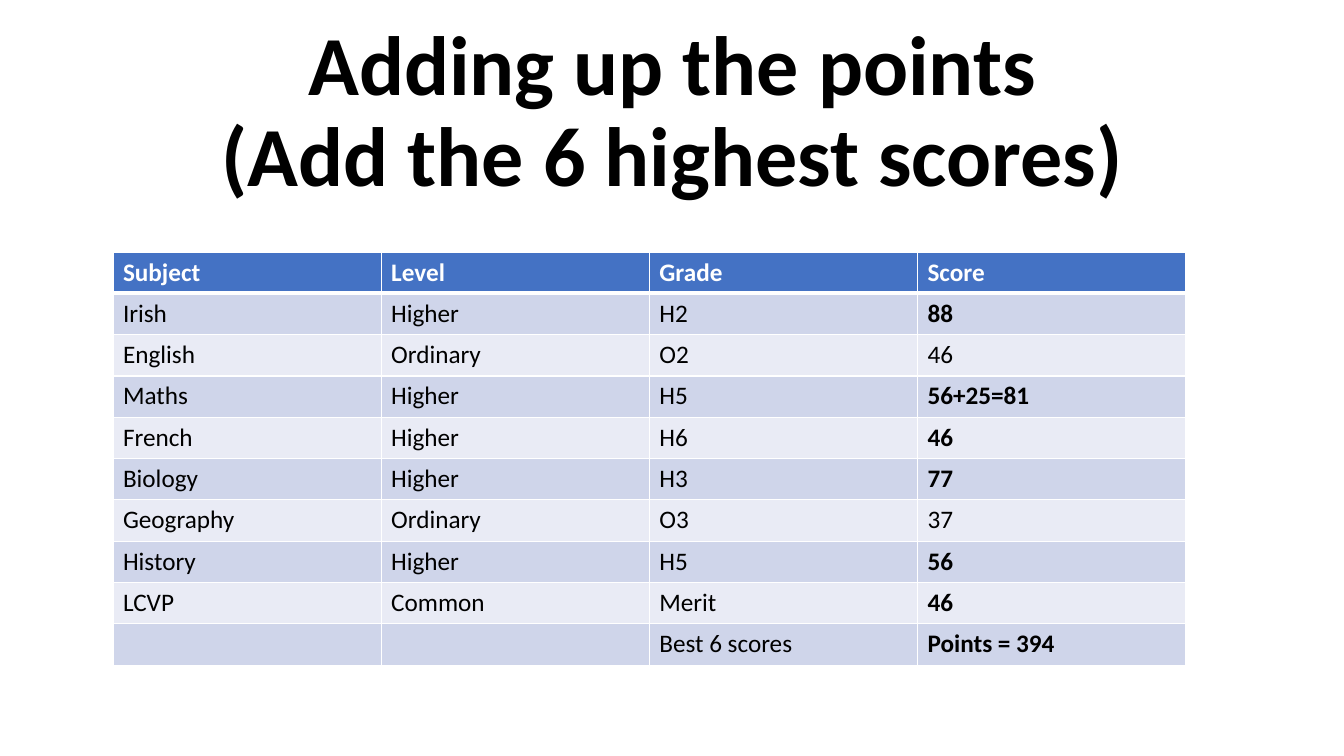
from lxml import etree
from pptx import Presentation
from pptx import util as u
from pptx.dml.color import RGBColor
from pptx.enum import text
from pptx.oxml import ns

FONT = "Calibri"
BLACK = RGBColor(0x00, 0x00, 0x00)
WHITE = RGBColor(0xFF, 0xFF, 0xFF)
HEADER_BLUE = RGBColor(0x44, 0x72, 0xC4)
BAND_DARK = RGBColor(0xCF, 0xD5, 0xEA)
BAND_LIGHT = RGBColor(0xE9, 0xEB, 0xF5)

WIDTH, HEIGHT = u.Inches(13.33), u.Inches(7.5)
COLUMN, ROW = u.Inches(2.66), u.Inches(0.41)
THIN, THICK = u.Pt(1), u.Pt(3)

TITLE_LINES = ["Adding up the points", "(Add the 6 highest scores)"]
HEADINGS = ("Subject", "Level", "Grade", "Score")
# Each result ends with whether its score is among the best six
RESULTS = [
    ("Irish", "Higher", "H2", "88", True),
    ("English", "Ordinary", "O2", "46", False),
    ("Maths", "Higher", "H5", "56+25=81", True),
    ("French", "Higher", "H6", "46", True),
    ("Biology", "Higher", "H3", "77", True),
    ("Geography", "Ordinary", "O3", "37", False),
    ("History", "Higher", "H5", "56", True),
    ("LCVP", "Common", "Merit", "46", True),
    ("", "", "Best 6 scores", "Points = 394", True),
]


def add_span(para, words, size, color, bold):
    span = para.add_run()
    span.text = words
    span.font.name = FONT
    span.font.size = u.Pt(size)
    span.font.bold = bold
    span.font.color.rgb = color


def add_title(page, lines):
    box = page.shapes.add_textbox(u.Inches(0.92), u.Inches(0.4),
                                  u.Inches(11.5), u.Inches(1.45))
    frame = box.text_frame
    frame.word_wrap = True
    frame.vertical_anchor = text.MSO_ANCHOR.MIDDLE
    para = frame.paragraphs[0]
    para.alignment = text.PP_ALIGN.CENTER
    para.line_spacing = 0.9
    for index, line in enumerate(lines):
        if index:
            para.add_line_break()
        add_span(para, line, 60, BLACK, True)


def set_borders(cell, top, bottom):
    properties = cell._tc.get_or_add_tcPr()
    widths = {"a:lnL": THIN, "a:lnR": THIN, "a:lnT": top, "a:lnB": bottom}
    for tag, width in widths.items():
        line = etree.SubElement(properties, ns.qn(tag), w=str(width))
        fill = etree.SubElement(line, ns.qn("a:solidFill"))
        etree.SubElement(fill, ns.qn("a:srgbClr"), val=str(WHITE))


def fill_cell(cell, words, fill, color, bold, top=THIN, bottom=THIN):
    set_borders(cell, top, bottom)
    cell.fill.solid()
    cell.fill.fore_color.rgb = fill
    if words:
        add_span(cell.text_frame.paragraphs[0], words, 18, color, bold)


def add_score_table(page, headings, results):
    rows, columns = len(results) + 1, len(headings)
    table = page.shapes.add_table(rows, columns, u.Inches(1.12), u.Inches(2.5),
                                  COLUMN * columns, ROW * rows).table
    for column in table.columns:
        column.width = COLUMN
    for row in table.rows:
        row.height = ROW

    # Header row with a thick rule below it
    for column, heading in enumerate(headings):
        fill_cell(table.cell(0, column), heading, HEADER_BLUE, WHITE, True,
                  bottom=THICK)

    # Banded rows, with the counted scores in bold
    for row, (*values, counted) in enumerate(results, 1):
        band = BAND_DARK if row % 2 else BAND_LIGHT
        for column, value in enumerate(values):
            bold = counted and column == columns - 1
            fill_cell(table.cell(row, column), value, band, BLACK, bold,
                      top=THICK if row == 1 else THIN)


def main():
    deck = Presentation()
    deck.slide_width, deck.slide_height = WIDTH, HEIGHT
    page = deck.slides.add_slide(deck.slide_layouts[6])
    add_title(page, TITLE_LINES)
    add_score_table(page, HEADINGS, RESULTS)
    deck.save("out.pptx")


if __name__ == "__main__":
    main()
